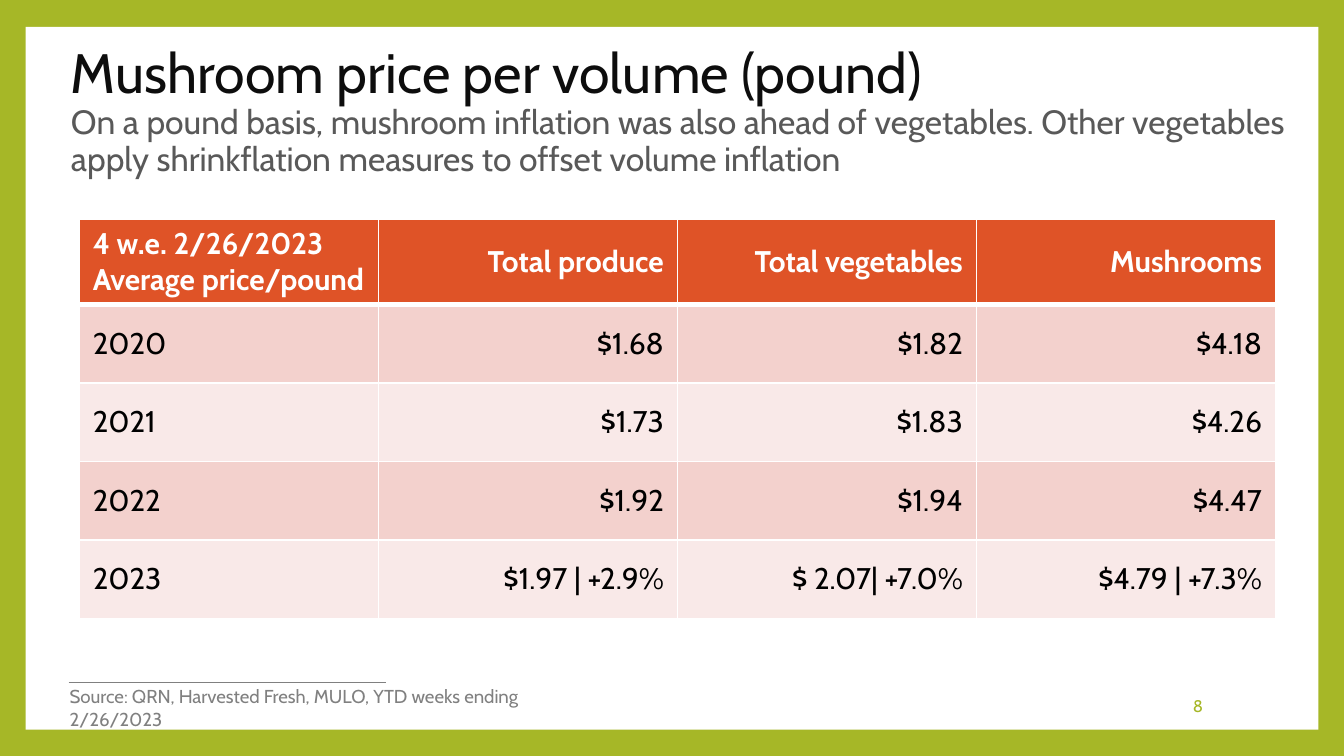
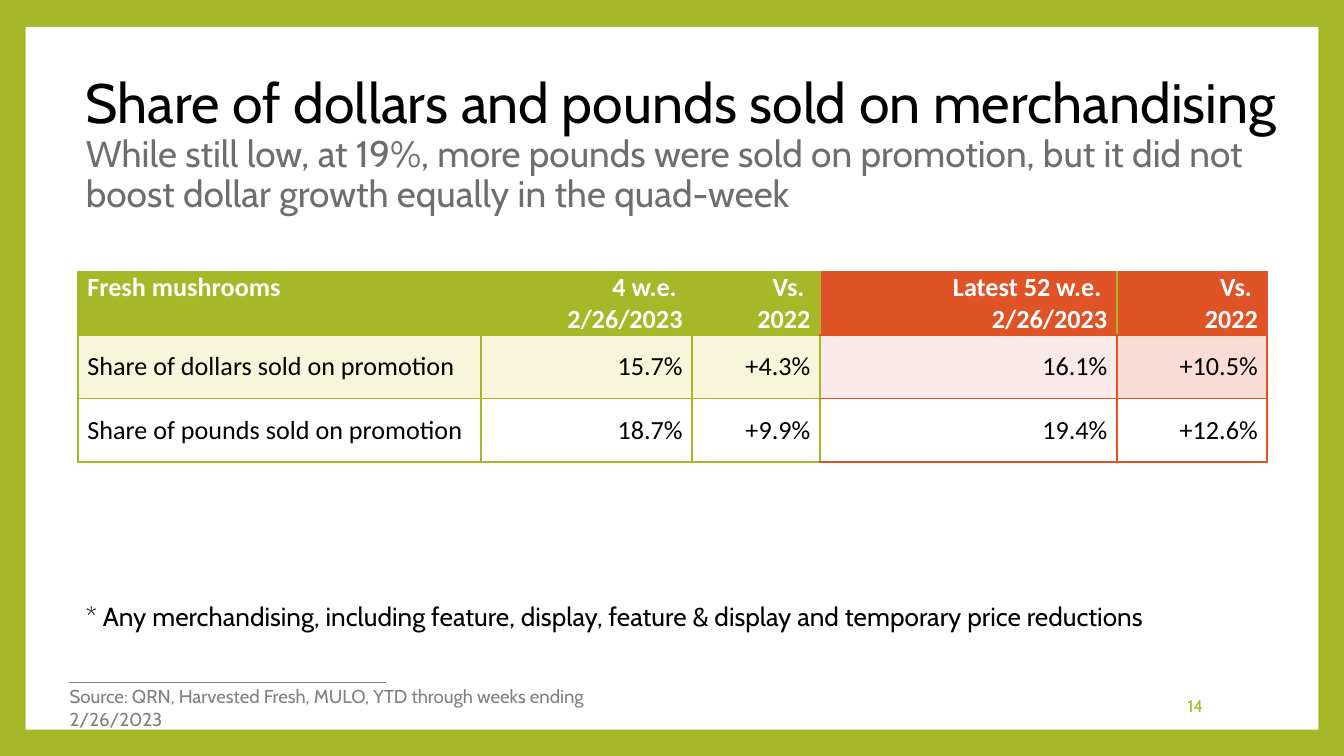
from dataclasses import dataclass
from typing import Any, Callable

from lxml.etree import SubElement
from pptx import Presentation
from pptx.dml.color import RGBColor as RGB
from pptx.enum.shapes import MSO_CONNECTOR as Link, MSO_SHAPE as Form
from pptx.enum.text import MSO_ANCHOR as Anchor, PP_ALIGN as Align
from pptx.oxml.ns import qn
from pptx.util import Inches, Pt

HUES = {
    "lime": "A6B727", "orange": "DF5327", "white": "FFFFFF", "black": "000000",
    "ink": "0D0D0D", "slate": "595959", "stone": "6E6E6E", "gray": "808080",
    "rose": "F3D1CD", "blush": "F9E9E8", "cream": "F7F6DA", "peach": "F9DDD4",
}
FONT = "Cabin"
WIDTH = Inches(10)
HEIGHT = WIDTH * 9 // 16
Box = tuple[float, float, float, float]
Edge = Callable[[int, int, str], tuple[str, float]]


@dataclass(frozen=True)
class Run:
    text: str
    size: float
    hue: str
    font: str = FONT
    bold: bool = False


@dataclass(frozen=True)
class Grid:
    left: float
    top: float
    cols: list[float]
    rows: list[float]
    cells: list[list[str]]
    fills: list[list[str]]
    edge: Edge
    font: str
    size: float
    pad: tuple[float, float]
    head: Anchor


@dataclass(frozen=True)
class Page:
    number: int
    box: Box
    title: Run
    lead: Run
    source: str
    width: float
    grid: Grid
    note: str = ""


def color(name: str) -> RGB:
    return RGB.from_string(HUES[name])


def assign(target: Any, values: dict[str, Any]) -> None:
    for key, value in values.items():
        setattr(target, key, value)


def style(run: Any, look: Run) -> None:
    assign(run.font, {"name": look.font, "size": Pt(look.size), "bold": look.bold})
    run.font.color.rgb = color(look.hue)


def write(slide: Any, box: Box, runs: list[Run], anchor: Anchor = Anchor.TOP,
          **layout: Any) -> None:
    """Add a text box with one paragraph, each run on its own line."""
    frame = slide.shapes.add_textbox(*map(Inches, box)).text_frame
    assign(frame, {"word_wrap": True, "vertical_anchor": anchor})
    para = frame.paragraphs[0]
    assign(para, layout)
    for i, look in enumerate(runs):
        if i:
            para.add_line_break()
        run = para.add_run()
        run.text = look.text
        style(run, look)


def frame(slide: Any) -> None:
    """Draw the lime border, the white panel and the footer rule."""
    back = slide.background.fill
    back.solid()
    back.fore_color.rgb = color("lime")
    panel = slide.shapes.add_shape(Form.RECTANGLE, *map(Inches, (0.19, 0.2, 9.62, 5.23)))
    panel.shadow.inherit = False
    panel.fill.solid()
    panel.fill.fore_color.rgb = color("white")
    panel.line.fill.background()
    rule = slide.shapes.add_connector(Link.STRAIGHT, *map(Inches, (0.51, 5.08, 2.87, 5.08)))
    rule.line.color.rgb = color("gray")
    rule.line.width = Pt(0.79)
    SubElement(rule._element.spPr, qn("a:effectLst"))


def border(cell: Any, side: str, hue: str, width: float) -> None:
    props = cell._tc.get_or_add_tcPr()
    line = SubElement(props, qn(f"a:ln{side}"), w=str(Pt(width)))
    fill = SubElement(line, qn("a:solidFill"))
    SubElement(fill, qn("a:srgbClr"), val=HUES[hue])


def table(slide: Any, grid: Grid) -> None:
    box = (grid.left, grid.top, sum(grid.cols), sum(grid.rows))
    tab = slide.shapes.add_table(len(grid.rows), len(grid.cols), *map(Inches, box)).table
    assign(tab, {"first_row": False, "horz_banding": False})
    for col, width in zip(tab.columns, grid.cols):
        col.width = Inches(width)
    for row, height in zip(tab.rows, grid.rows):
        row.height = Inches(height)
    across, down = map(Inches, grid.pad)
    for r, texts in enumerate(grid.cells):
        for c, text in enumerate(texts):
            cell = tab.cell(r, c)
            assign(cell, {
                "text": text,
                "vertical_anchor": Anchor.MIDDLE if r else grid.head,
                "margin_left": across, "margin_right": across,
                "margin_top": down, "margin_bottom": down,
            })
            look = Run("", grid.size, "black" if r else "white", grid.font, not r)
            for para in cell.text_frame.paragraphs:
                para.alignment = Align.RIGHT if c else Align.LEFT
                for run in para.runs:
                    style(run, look)
            for side in "LRTB":
                border(cell, side, *grid.edge(r, c, side))
            cell.fill.solid()
            cell.fill.fore_color.rgb = color(grid.fills[r][c])


def build(deck: Any, page: Page) -> None:
    slide = deck.slides.add_slide(deck.slide_layouts[6])
    frame(slide)
    write(slide, page.box, [page.title, page.lead], Anchor.MIDDLE, line_spacing=0.9)
    write(slide, (7.65, 5.1, 1.4, 0.3), [Run(str(page.number), 9, "lime")],
          Anchor.MIDDLE, alignment=Align.RIGHT)
    write(slide, (0.42, 5.05, page.width, 0.27), [Run(page.source, 10, "gray")])
    if page.note:
        write(slide, (0.54, 4.42, 8.1, 0.34), [Run(page.note, 14, "black")])
    table(slide, page.grid)


def plain(r: int, c: int, side: str) -> tuple[str, float]:
    """White lines, thicker below the header."""
    heavy = (r, side) in ((0, "B"), (1, "T"))
    return "white", 3 if heavy else 1


def split(r: int, c: int, side: str) -> tuple[str, float]:
    """Lime lines for the 4 weeks, orange ones for the 52 weeks."""
    seam = r == 0 and (c, side) in ((3, "R"), (4, "L"))
    lime = c < 3 or (c, side) == (3, "L") or seam
    return "lime" if lime else "orange", 1


PRICES = Grid(
    0.59, 1.63, [8.9 / 4] * 4, [0.62] + [2.34 / 4] * 4,
    [
        ["4 w.e. 2/26/2023\nAverage price/pound", "Total produce",
         "Total vegetables", "Mushrooms"],
        ["2020", "$1.68", "$1.82", "$4.18"],
        ["2021", "$1.73", "$1.83", "$4.26"],
        ["2022", "$1.92", "$1.94", "$4.47"],
        ["2023", "$1.97 | +2.9%", "$ 2.07| +7.0%", "$4.79 | +7.3%"],
    ],
    [[hue] * 4 for hue in ("orange", "rose", "blush", "rose", "blush")],
    plain, FONT, 16, (0.1, 0.05), Anchor.MIDDLE,
)
SHARES = Grid(
    0.58, 2.02, [3, 1.57, 0.95, 2.21, 1.12], [1.42 / 3] * 3,
    [
        ["Fresh mushrooms", "4 w.e. \n2/26/2023", "Vs. \n2022",
         " Latest 52 w.e. \n2/26/2023", "Vs. \n2022"],
        ["Share of dollars sold on promotion", "15.7%", "+4.3%", "16.1%", "+10.5%"],
        ["Share of pounds sold on promotion", "18.7%", "+9.9%", "19.4%", "+12.6%"],
    ],
    [["lime"] * 3 + ["orange"] * 2, ["cream"] * 3 + ["blush", "peach"], ["white"] * 5],
    split, "Calibri", 14, (0.07, 0), Anchor.TOP,
)
PAGES = [
    Page(
        8, (0.43, 0.36, 9.43, 0.95),
        Run("Mushroom price per volume (pound)", 29.7, "ink"),
        Run("On a pound basis, mushroom inflation was also ahead of vegetables. "
            "Other vegetables apply shrinkflation measures to offset volume inflation",
            18, "slate"),
        "Source: QRN, Harvested Fresh, MULO, YTD weeks ending 2/26/2023", 4.1, PRICES,
    ),
    Page(
        14, (0.54, 0.54, 9.29, 1.09),
        Run("Share of dollars and pounds sold on merchandising", 29.7, "black"),
        Run("While still low, at 19%, more pounds were sold on promotion, "
            "but it did not boost dollar growth equally in the quad-week", 19.8, "stone"),
        "Source: QRN, Harvested Fresh, MULO, YTD through weeks ending 2/26/2023", 4.6,
        SHARES,
        "* Any merchandising, including feature, display, feature & display "
        "and temporary price reductions",
    ),
]


def main() -> None:
    deck = Presentation()
    assign(deck, {"slide_width": WIDTH, "slide_height": HEIGHT})
    for page in PAGES:
        build(deck, page)
    deck.save("out.pptx")


if __name__ == "__main__":
    main()
